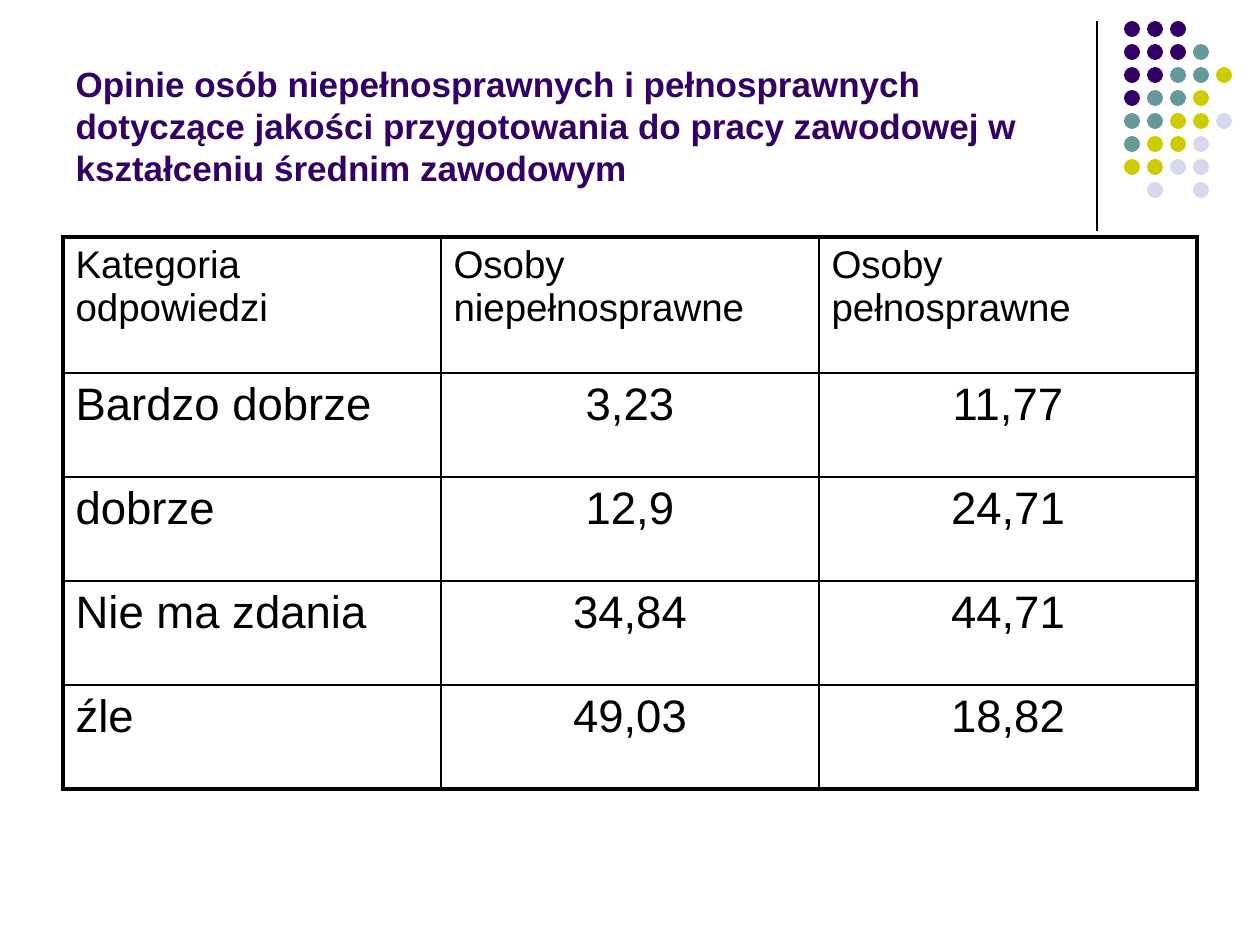
from pptx import Presentation
from pptx.dml.color import RGBColor
from pptx.enum.shapes import MSO_CONNECTOR, MSO_SHAPE
from pptx.enum.text import MSO_ANCHOR, MSO_AUTO_SIZE, PP_ALIGN
from pptx.oxml import parse_xml
from pptx.oxml.ns import nsdecls
from pptx.util import Emu, Pt
from lxml.etree import SubElement


def px(n):
    return Emu(round(n * 914400 / 126))


def rgb(code):
    return RGBColor.from_string(code)


deck = Presentation()
deck.slide_width, deck.slide_height = px(1260), px(945)
slide = deck.slides.add_slide(deck.slide_layouts[5])
shapes = slide.shapes

# Vertical rule
rule = shapes.add_connector(
    MSO_CONNECTOR.STRAIGHT, px(1097), px(21), px(1097), px(231))
rule.line.color.rgb = rgb("000000")
rule.line.width = Pt(0.75)
props = rule.element.spPr
SubElement(props, "{%s}effectLst" % props.nsmap["a"])

# Dot grid, one letter per colour
hues = {"P": "330066", "T": "669999", "Y": "CCCC00", "L": "D8D8EC"}
grid = ["PPP", "PPPT", "PPTTY", "PTTY", "TTYYL", "TYYL", "YYLL", " L L"]
dots = shapes.add_group_shape()
for r, row in enumerate(grid):
    for c, key in enumerate(row):
        if key in hues:
            dot = dots.shapes.add_shape(
                MSO_SHAPE.OVAL, px(1124 + 23 * c), px(21 + 23 * r), px(16), px(16))
            dot.shadow.inherit = False
            dot.fill.solid()
            dot.fill.fore_color.rgb = rgb(hues[key])
            dot.line.fill.background()

# Title
title = shapes.title
title.left, title.top, title.width, title.height = px(63), px(16), px(1039), px(179)
frame = title.text_frame
frame.word_wrap = True
frame.auto_size = MSO_AUTO_SIZE.NONE
frame.vertical_anchor = MSO_ANCHOR.BOTTOM
para = frame.paragraphs[0]
para.alignment = PP_ALIGN.LEFT
run = para.add_run()
run.text = ("Opinie osób niepełnosprawnych i pełnosprawnych dotyczące jakości "
            "przygotowania do pracy zawodowej w kształceniu średnim zawodowym")
run.font.name, run.font.size, run.font.bold = "Arial", Pt(20), True
run.font.color.rgb = rgb("330066")

# Table
data = [
    ["Kategoria odpowiedzi", "Osoby niepełnosprawne", "Osoby pełnosprawne"],
    ["Bardzo dobrze", "3,23", "11,77"],
    ["dobrze", "12,9", "24,71"],
    ["Nie ma zdania", "34,84", "44,71"],
    ["źle", "49,03", "18,82"],
]
high = [136, 104, 104, 104, 104]
last = len(data) - 1
table = shapes.add_table(5, 3, px(63), px(237), px(1134), px(sum(high))).table
table.first_row = table.horz_banding = False
for col in table.columns:
    col.width = px(378)
for r, row in enumerate(data):
    table.rows[r].height = px(high[r])
    for c, text in enumerate(row):
        cell = table.cell(r, c)
        para = cell.text_frame.paragraphs[0]
        para.alignment = PP_ALIGN.CENTER if r and c else PP_ALIGN.LEFT
        run = para.add_run()
        run.text = text
        run.font.name, run.font.size = "Arial", Pt(26 if r else 22)
        run.font.color.rgb = rgb("000000")
        # Borders: thick around the table, thin inside; they precede the fill
        outer = {"L": c == 0, "R": c == 2, "T": r == 0, "B": r == last}
        for side, thick in outer.items():
            cell._tc.get_or_add_tcPr().append(parse_xml(
                f'<a:ln{side} {nsdecls("a")} w="{Pt(2.25 if thick else 1)}">'
                '<a:solidFill><a:srgbClr val="000000"/></a:solidFill>'
                f'</a:ln{side}>'))
        cell.fill.background()

deck.save("out.pptx")
